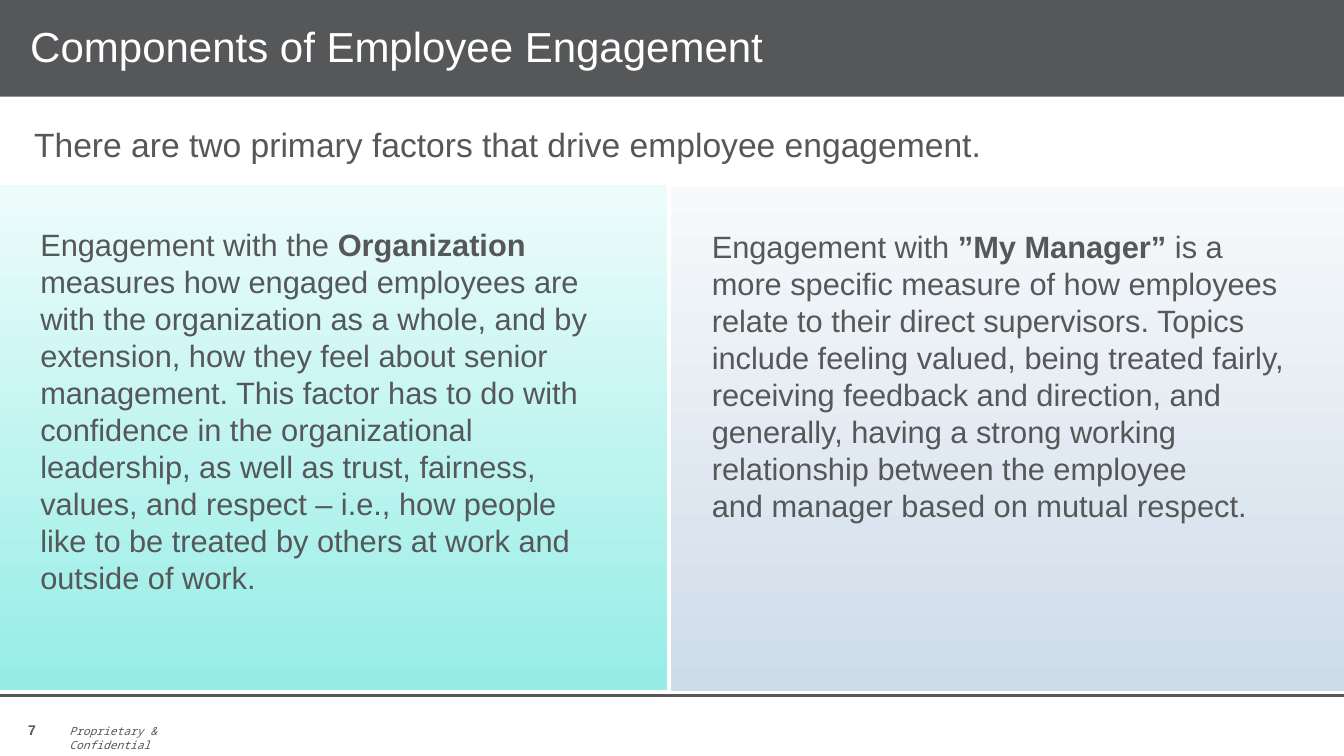
from pptx import Presentation
from pptx.dml.color import RGBColor
from pptx.enum.shapes import MSO_CONNECTOR as Connector, MSO_SHAPE as Shape
from pptx.enum.text import MSO_ANCHOR as Anchor, MSO_AUTO_SIZE as AutoSize, PP_ALIGN as Align
from pptx.oxml.ns import qn
from pptx.util import Inches, Pt
from lxml.etree import SubElement

GREY, WHITE = "555759", "FFFFFF"


def color(value):
    return RGBColor.from_string(value)


class SlideBuilder:
    """Holds the style and current slide; places are percentages of its size."""

    def __init__(self, deck, font="Arial", ink=GREY):
        self.width, self.height = deck.slide_width, deck.slide_height
        self.slide = deck.slides.add_slide(deck.slide_layouts[5])
        self.font, self.ink = font, ink

    def place(self, left, top, width, height):
        return (round(self.width * left / 100), round(self.height * top / 100),
                round(self.width * width / 100), round(self.height * height / 100))

    def fill_text(self, shape, paragraphs, size, insets=(0.1, 0.05, 0.1, 0.05),
                  anchor=Anchor.TOP, ink=None, font=None, bold=False, italic=False):
        """Each paragraph is a list of (text, bold) spans; a newline is a line break."""
        frame = shape.text_frame
        frame.word_wrap = True
        frame.auto_size = AutoSize.NONE
        frame.vertical_anchor = anchor
        (frame.margin_left, frame.margin_top,
         frame.margin_right, frame.margin_bottom) = map(Inches, insets)
        for index, spans in enumerate(paragraphs):
            para = frame.add_paragraph() if index else frame.paragraphs[0]
            para.alignment = Align.LEFT
            for text, strong in spans:
                for number, line in enumerate(text.split("\n")):
                    if number:
                        para.add_line_break()
                    span = para.add_run()
                    span.text = line
                    span.font.name = font or self.font
                    span.font.size = Pt(size)
                    span.font.bold = bold or strong
                    span.font.italic = italic
                    span.font.color.rgb = color(ink or self.ink)

    def title(self, text, place, size):
        title = self.slide.shapes.title
        title.left, title.top, title.width, title.height = self.place(*place)
        title.fill.solid()
        title.fill.fore_color.rgb = color(self.ink)
        self.fill_text(title, [[(text, False)]], size, (0.3, 0.05, 0.05, 0.05),
                       Anchor.MIDDLE, WHITE)
        title.text_frame.paragraphs[0].line_spacing = 0.95

    def text(self, text, place, size, **style):
        box = self.slide.shapes.add_textbox(*self.place(*place))
        self.fill_text(box, [[(text, False)]], size, **style)

    def panel(self, paragraphs, place, size, top_color, bottom_color):
        panel = self.slide.shapes.add_shape(Shape.RECTANGLE, *self.place(*place))
        panel.shadow.inherit = False
        panel.line.fill.background()
        panel.fill.gradient()
        panel.fill.gradient_angle = 270
        for stop, position, shade in zip(panel.fill.gradient_stops, (0, 1),
                                         (top_color, bottom_color)):
            stop.position = position
            stop.color.rgb = color(shade)
        self.fill_text(panel, paragraphs, size, (0.4, 0.4, 0.4, 0.4))

    def rule(self, top, weight):
        left, y, width, _ = self.place(0, top, 100, 0)
        rule = self.slide.shapes.add_connector(Connector.STRAIGHT, left, y, left + width, y)
        rule.line.color.rgb = color(self.ink)
        rule.line.width = Pt(weight)
        SubElement(rule._element.spPr, qn("a:effectLst"))


def main():
    deck = Presentation()
    deck.slide_width, deck.slide_height = Inches(13.33), Inches(7.5)
    page = SlideBuilder(deck)

    # Footer
    page.text("7", (1.35, 93.07, 14.33, 5.2), 10, anchor=Anchor.BOTTOM, bold=True)
    page.text("Proprietary & Confidential", (4.43, 95.2, 11.18, 3.2), 8,
              font="Noto Sans Mono", italic=True)
    page.rule(92, 2.25)

    # Title and lead sentence
    page.title("Components of Employee Engagement", (0, 0, 100, 12.8), 30)
    page.text("There are two primary factors that drive employee engagement.",
              (1.8, 15.73, 75, 6.67), 24)

    # The two factors
    page.panel([
        [("Engagement with the ", False), ("Organization", True),
         (" measures how engaged employees are with the organization as a whole, "
          "and by extension, how they feel about senior management. This factor has "
          "to do with confidence in the organizational leadership, as well as trust, "
          "fairness, values, and respect – i.e., how people", False)],
        [("like to be treated by others at work and outside of work.", False)],
    ], (0, 24.53, 49.66, 66.8), 22, "EDFCFB", "95EDE6")
    page.panel([
        [("Engagement with ", False), ("”My Manager” ", True),
         ("is a \nmore specific measure of how employees relate to their direct "
          "supervisors. Topics include feeling valued, being treated fairly, receiving "
          "feedback and direction, and generally, having a strong working relationship "
          "between the employee \nand manager based on mutual respect.", False)],
    ], (49.96, 24.8, 50.04, 66.67), 22, "F7F9FB", "CEDCE9")

    deck.save("out.pptx")


if __name__ == "__main__":
    main()
